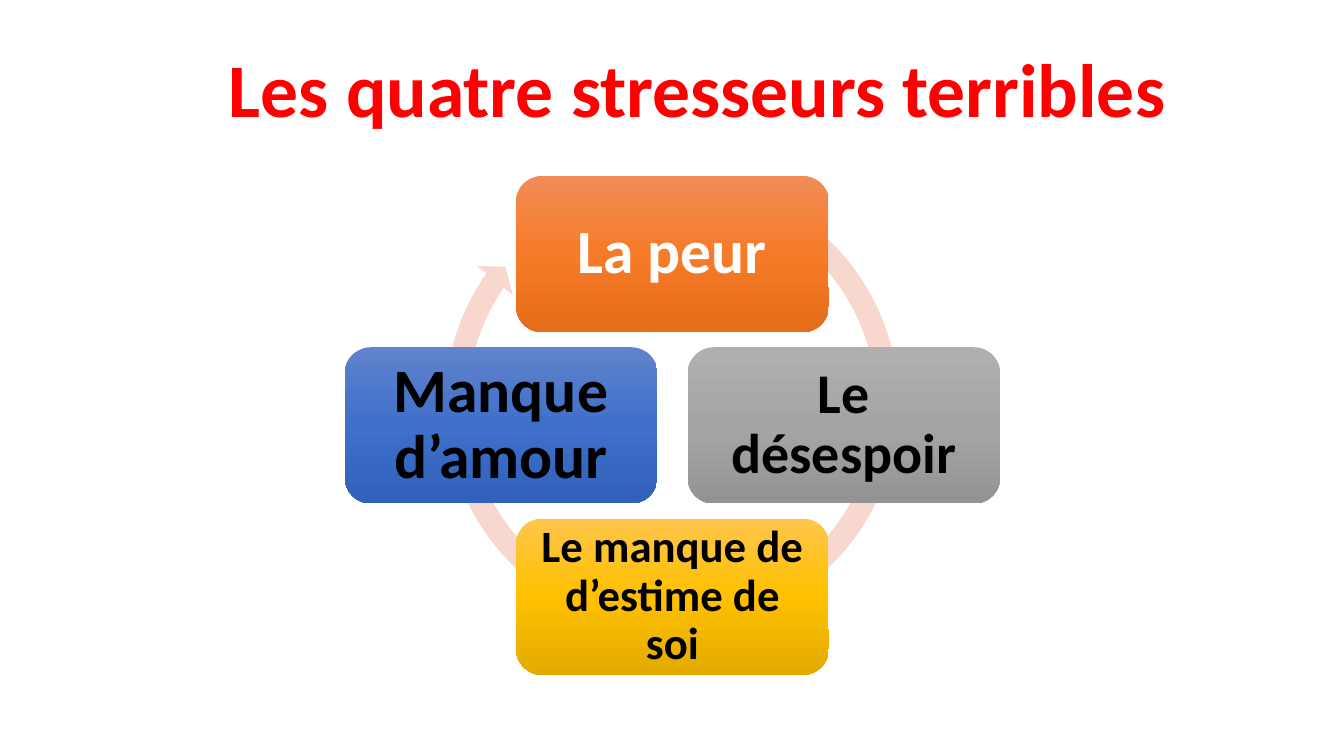
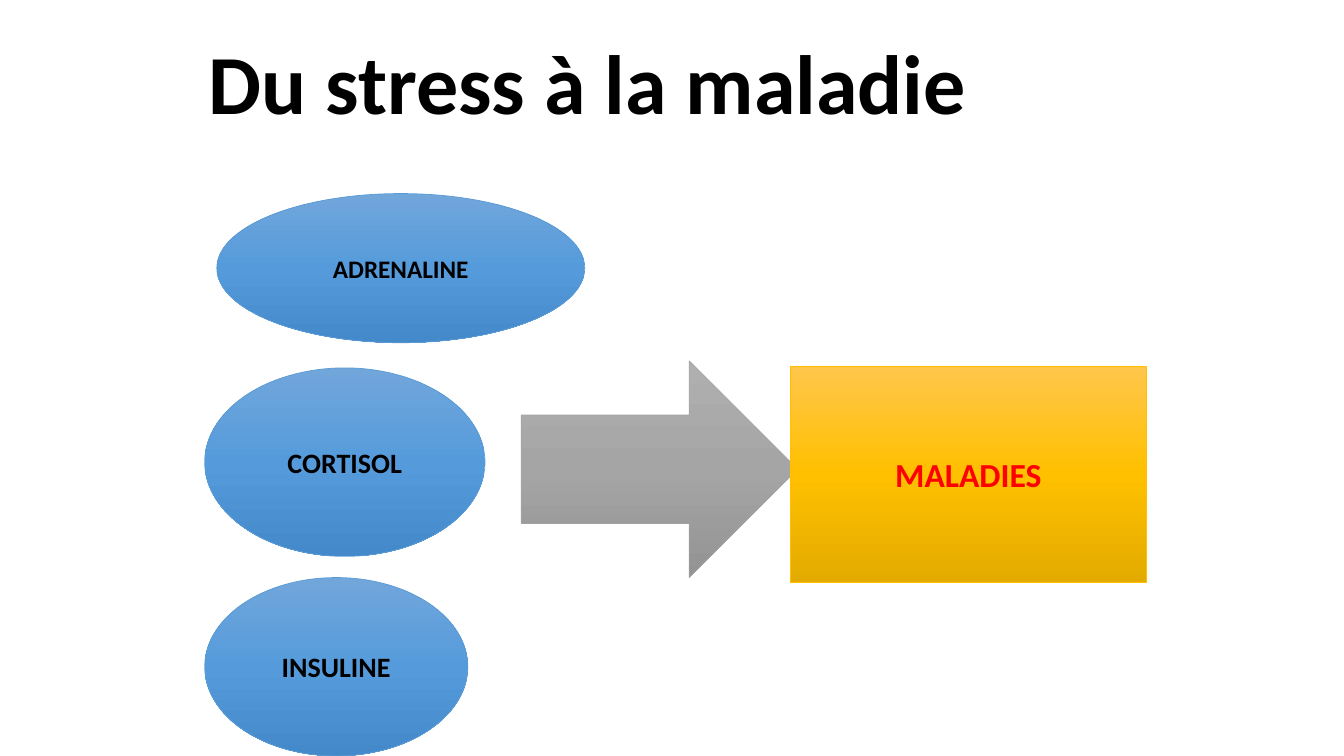
import copy
import math

import pptx
import pptx.dml.color
import pptx.enum.shapes
import pptx.enum.text
import pptx.oxml.ns
import pptx.util

Inches = pptx.util.Inches
SHAPES = pptx.enum.shapes.MSO_SHAPE
ALIGN = pptx.enum.text.PP_ALIGN
COLORS = {
    "black": "000000",
    "white": "FFFFFF",
    "red": "FF0000",
    "ring": "F8D7CE",
    "blue_line": "5B9BD5",
    "grey_line": "A5A5A5",
    "gold_line": "FFC000",
}
GRADIENTS = {
    "orange": ("F18C57", "F67B28", "E56C19"),
    "grey": ("AFAFAF", "A5A5A5", "939393"),
    "gold": ("FFC64B", "FFC000", "E3AB00"),
    "indigo": ("6183CB", "3E70CA", "3062BB"),
    "blue": ("71A6DB", "559BDB", "448ACA"),
}
FONT = {"name": "Calibri", "bold": True}
TITLE_PARAGRAPH = {"alignment": ALIGN.LEFT, "line_spacing": 0.9}
CYCLE_PARAGRAPH = {"alignment": ALIGN.CENTER, "line_spacing": 0.9}
LABEL_PARAGRAPH = {"alignment": ALIGN.CENTER}
FRAME = {
    "word_wrap": True,
    "auto_size": pptx.enum.text.MSO_AUTO_SIZE.NONE,
    "vertical_anchor": pptx.enum.text.MSO_ANCHOR.MIDDLE,
}
CYCLE_CENTER = (6.67, 4.22)
CYCLE_RADIUS = 1.7
CYCLE_BOX = (3.1, 1.55)
CYCLE_ITEMS = [
    ("La peur", "orange", "white", 44, 0.18),
    ("Le désespoir", "grey", "black", 40, 0.17),
    ("Le manque de d’estime de soi", "gold", "black", 32, 0.13),
    ("Manque d’amour", "indigo", "black", 44, 0.18),
]
HORMONES = [
    ("ADRENALINE", (2.15, 1.92, 3.65, 1.48), 18),
    ("CORTISOL", (2.03, 3.65, 2.78, 1.87), 20),
    ("INSULINE", (2.03, 5.73, 2.61, 1.77), 20),
]


def rgb(name):
    """Return the named colour."""
    return pptx.dml.color.RGBColor.from_string(COLORS[name])


def apply(target, values):
    """Set each attribute of the target from a dict."""
    for name, value in values.items():
        setattr(target, name, value)


def write_text(shape, text, size, color, paragraph_format, margin=None):
    """Write one formatted paragraph into a shape."""
    frame = shape.text_frame
    apply(frame, FRAME)
    if margin is not None:
        sides = ("left", "top", "right", "bottom")
        apply(frame, {f"margin_{side}": Inches(margin) for side in sides})
    paragraph = frame.paragraphs[0]
    paragraph.text = text
    apply(paragraph, paragraph_format)
    apply(paragraph.font, FONT | {"size": pptx.util.Pt(size)})
    paragraph.font.color.rgb = rgb(color)


def fill_gradient(shape, name):
    """Fill a shape with a three-stop gradient from top to bottom."""
    shape.fill.gradient()
    shape.fill.gradient_angle = 270
    stops = shape._element.spPr.find(".//" + pptx.oxml.ns.qn("a:gsLst"))
    stops.append(copy.deepcopy(stops[0]))
    for index, stop in enumerate(shape.fill.gradient_stops):
        stop.position = index / 2
        stop.color.rgb = pptx.dml.color.RGBColor.from_string(GRADIENTS[name][index])


def add_shape(slide, kind, box, gradient=None, line=None):
    """Add a shadowless shape with an optional gradient and outline."""
    shape = slide.shapes.add_shape(kind, *map(Inches, box))
    shape.shadow.inherit = False
    if gradient:
        fill_gradient(shape, gradient)
    if line:
        shape.line.color.rgb = rgb(line)
        shape.line.width = pptx.util.Pt(0.5)
    else:
        shape.line.fill.background()
    return shape


def add_titled_slide(presentation, text, box, size, color):
    """Add a title-only slide and place its title."""
    slide = presentation.slides.add_slide(presentation.slide_layouts[5])
    title = slide.shapes.title
    apply(title, dict(zip(("left", "top", "width", "height"), map(Inches, box))))
    write_text(title, text, size, color, TITLE_PARAGRAPH)
    return slide


def add_ring(slide):
    """Add the circular arrow behind the cycle."""
    ring = add_shape(slide, SHAPES.CIRCULAR_ARROW, (4.3, 1.64, 4.73, 4.73))
    for index, value in enumerate((0.047, 2.729, 128.918, 179.897, 0.048)):
        ring.adjustments[index] = value
    ring.fill.solid()
    ring.fill.fore_color.rgb = rgb("ring")


def add_cycle(slide):
    """Add the boxes clockwise from the top of the ring."""
    add_ring(slide)
    width, height = CYCLE_BOX
    for index, (text, gradient, color, size, margin) in enumerate(CYCLE_ITEMS):
        angle = math.tau * index / len(CYCLE_ITEMS)
        left = CYCLE_CENTER[0] + CYCLE_RADIUS * math.sin(angle) - width / 2
        top = CYCLE_CENTER[1] - CYCLE_RADIUS * math.cos(angle) - height / 2
        box = add_shape(slide, SHAPES.ROUNDED_RECTANGLE, (left, top, width, height), gradient)
        write_text(box, text, size, color, CYCLE_PARAGRAPH, margin)


def add_illness_flow(slide):
    """Add the hormones, the arrow and the resulting illnesses."""
    for text, box, size in HORMONES:
        hormone = add_shape(slide, SHAPES.OVAL, box, "blue", "blue_line")
        write_text(hormone, text, size, "black", LABEL_PARAGRAPH)
    add_shape(slide, SHAPES.RIGHT_ARROW, (5.17, 3.58, 2.74, 2.15), "grey", "grey_line")
    illness = add_shape(slide, SHAPES.RECTANGLE, (7.84, 3.63, 3.53, 2.15), "gold", "gold_line")
    write_text(illness, "MALADIES", 24, "red", LABEL_PARAGRAPH)


def main():
    """Build and save the presentation."""
    presentation = pptx.Presentation()
    apply(presentation, {"slide_width": Inches(13.33), "slide_height": Inches(7.5)})
    add_cycle(add_titled_slide(
        presentation, "Les quatre stresseurs terribles", (2.17, 0.3, 9.5, 1.25), 54, "red"))
    add_illness_flow(add_titled_slide(
        presentation, "Du stress à la maladie", (1.97, 0.09, 9.48, 1.55), 60, "black"))
    presentation.save("out.pptx")


if __name__ == "__main__":
    main()
